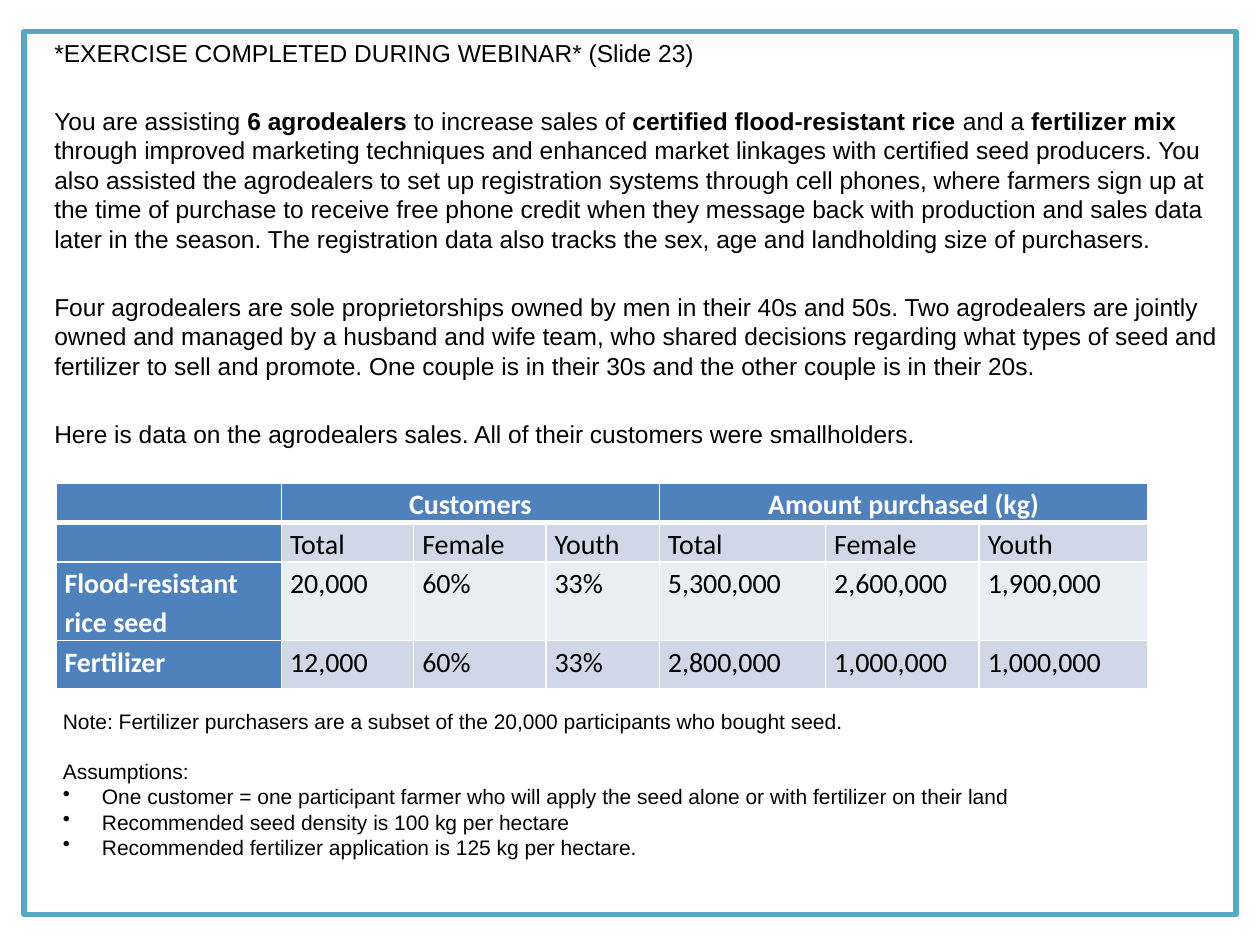
from dataclasses import dataclass

from lxml import etree
from pptx import Presentation
from pptx import util as u
from pptx.dml.color import RGBColor
from pptx.enum import shapes, text
from pptx.oxml import ns

Pt = u.Pt


@dataclass(frozen=True)
class Theme:
    black: str = "000000"
    white: str = "FFFFFF"
    frame: str = "55A9C2"
    header: str = "4F81BD"
    band_dark: str = "D0D8E8"
    band_light: str = "E9EDF4"
    body_font: str = "Arial"
    table_font: str = "Calibri"
    body_size: float = 14
    table_size: float = 16
    note_size: float = 12


THEME = Theme()

SCENARIO = [
    "*EXERCISE COMPLETED DURING WEBINAR* (Slide 23)",
    "You are assisting |6 agrodealers| to increase sales of |certified flood-resistant rice| and a "
    "|fertilizer mix| through improved marketing techniques and enhanced market linkages with "
    "certified seed producers. You also assisted the agrodealers to set up registration systems "
    "through cell phones, where farmers sign up at the time of purchase to receive free phone "
    "credit when they message back with production and sales data later in the season. The "
    "registration data also tracks the sex, age and landholding size of purchasers.",
    "Four agrodealers are sole proprietorships owned by men in their 40s and 50s. Two agrodealers "
    "are jointly owned and managed by a husband and wife team, who shared decisions regarding "
    "what types of seed and fertilizer to sell and promote. One couple is in their 30s and the "
    "other couple is in their 20s.",
    "Here is data on the agrodealers sales. All of their customers were smallholders.",
]
SALES = [
    ["", "Customers", "", "", "Amount purchased (kg)", "", ""],
    ["", "Total", "Female", "Youth", "Total", "Female", "Youth"],
    ["Flood-resistant rice seed", "20,000", "60%", "33%", "5,300,000", "2,600,000", "1,900,000"],
    ["Fertilizer", "12,000", "60%", "33%", "2,800,000", "1,000,000", "1,000,000"],
]
COLUMN_WIDTHS = [128.9, 75.6, 75.6, 64.8, 95, 87.8, 96.5]
ROW_HEIGHTS = [17.3, 17.3, 41, 27.4]
NOTES = ["Note: Fertilizer purchasers are a subset of the 20,000 participants who bought seed.", "Assumptions:"]
ASSUMPTIONS = [
    "One customer = one participant farmer who will apply the seed alone or with fertilizer on their land",
    "Recommended seed density is 100 kg per hectare",
    "Recommended fertilizer application is 125 kg per hectare.",
]


def set_attrs(obj, **values):
    for name, value in values.items():
        setattr(obj, name, value)


def rgb(color):
    return RGBColor.from_string(color)


def add_run(p, words, size, font, color=THEME.black, bold=False):
    r = p.add_run()
    r.text = words
    set_attrs(r.font, size=Pt(size), name=font, bold=bold)
    r.font.color.rgb = rgb(color)


def set_bullet(p, char=None, indent=0):
    pPr = p._p.get_or_add_pPr()
    pPr.set("marL", str(Pt(indent)))
    pPr.set("indent", str(-Pt(indent)))
    if char:
        etree.SubElement(pPr, ns.qn("a:buChar"), char=char)
    else:
        etree.SubElement(pPr, ns.qn("a:buNone"))


def next_paragraph(tf, index):
    return tf.add_paragraph() if index else tf.paragraphs[0]


def add_frame(s, box):
    sp = s.shapes.add_shape(shapes.MSO_SHAPE.RECTANGLE, *map(Pt, box))
    sp.shadow.inherit = False
    sp.fill.background()
    sp.line.color.rgb = rgb(THEME.frame)
    sp.line.width = Pt(3)


def fill_scenario(sp, box):
    left, top, width, height = map(Pt, box)
    set_attrs(sp, left=left, top=top, width=width, height=height)
    tf = sp.text_frame
    set_attrs(tf, auto_size=text.MSO_AUTO_SIZE.NONE, vertical_anchor=text.MSO_ANCHOR.TOP)
    for i, words in enumerate(SCENARIO):
        p = next_paragraph(tf, i)
        p.space_before = Pt(22.2 if i else 0)
        set_bullet(p)
        for j, part in enumerate(words.split("|")):
            add_run(p, part, THEME.body_size, THEME.body_font, bold=j % 2 == 1)


def set_borders(cell, **widths):
    tcPr = cell._tc.get_or_add_tcPr()
    for side in "LRTB":
        ln = etree.SubElement(tcPr, ns.qn(f"a:ln{side}"), w=str(Pt(widths.get(side, 1))))
        fill = etree.SubElement(ln, ns.qn("a:solidFill"))
        etree.SubElement(fill, ns.qn("a:srgbClr"), val=THEME.white)


def format_cell(cell, words, row, col):
    is_header = row == 0 or col == 0
    set_borders(cell, **{0: {"B": 3}, 1: {"T": 3}}.get(row, {}))
    cell.fill.solid()
    band = THEME.band_dark if row % 2 else THEME.band_light
    cell.fill.fore_color.rgb = rgb(THEME.header if is_header else band)
    set_attrs(cell, margin_left=Pt(5), margin_right=Pt(5), margin_top=0, margin_bottom=0)
    p = cell.text_frame.paragraphs[0]
    p.line_spacing = 1.15
    if row == 0:
        p.alignment = text.PP_ALIGN.CENTER
    if words:
        color = THEME.white if is_header else THEME.black
        add_run(p, words, THEME.table_size, THEME.table_font, color, is_header)
    else:
        etree.SubElement(p._p, ns.qn("a:endParaRPr"), sz=str(THEME.table_size * 100))


def add_sales_table(s, left, top):
    table = s.shapes.add_table(
        len(ROW_HEIGHTS), len(COLUMN_WIDTHS),
        Pt(left), Pt(top), Pt(sum(COLUMN_WIDTHS)), Pt(sum(ROW_HEIGHTS)),
    ).table
    for column, width in zip(table.columns, COLUMN_WIDTHS):
        column.width = Pt(width)
    for row, height in zip(table.rows, ROW_HEIGHTS):
        row.height = Pt(height)
    for i, row in enumerate(SALES):
        for j, words in enumerate(row):
            format_cell(table.cell(i, j), words, i, j)
    for first in (1, 4):
        table.cell(0, first).merge(table.cell(0, first + 2))


def add_notes_box(s, box):
    tf = s.shapes.add_textbox(*map(Pt, box)).text_frame
    set_attrs(tf, word_wrap=True, margin_left=Pt(5.76), margin_right=Pt(5.76),
              margin_top=Pt(2.88), margin_bottom=Pt(2.88))
    for i, words in enumerate(NOTES + ASSUMPTIONS):
        p = next_paragraph(tf, i)
        if words in ASSUMPTIONS:
            set_bullet(p, "•", 22.3)
        elif i:
            p.space_before = Pt(14.5)
        add_run(p, words, THEME.note_size, THEME.body_font)


def build_exercise_slide(prs):
    s = prs.slides.add_slide(prs.slide_layouts[1])
    title = s.shapes.title
    title.element.getparent().remove(title.element)
    add_frame(s, (13.7, 18, 692.6, 504.7))
    fill_scenario(s.placeholders[1], (23.8, 18, 684, 255.6))
    add_sales_table(s, 31.9, 276)
    add_notes_box(s, (30.2, 401.8, 684, 108))


def main():
    prs = Presentation()
    set_attrs(prs, slide_width=Pt(720), slide_height=Pt(540))
    build_exercise_slide(prs)
    prs.save("out.pptx")


if __name__ == "__main__":
    main()
